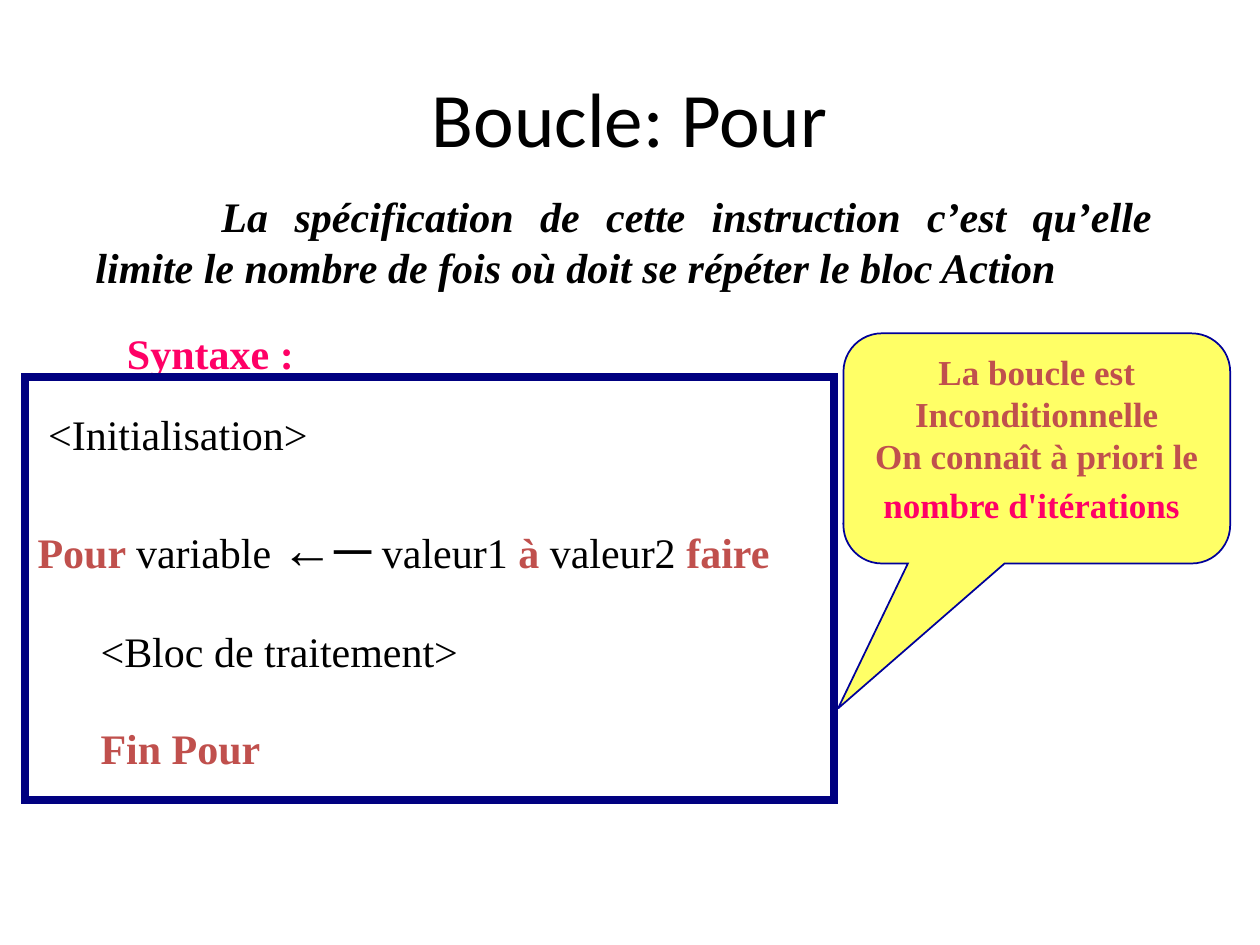
from lxml.etree import SubElement
from pptx import Presentation
from pptx.dml.color import RGBColor
from pptx.enum.shapes import MSO_SHAPE
from pptx.enum.text import MSO_ANCHOR, PP_ALIGN
from pptx.oxml.ns import qn
from pptx.util import Pt

BLACK = RGBColor(0x00, 0x00, 0x00)
WHITE = RGBColor(0xFF, 0xFF, 0xFF)
PINK = RGBColor(0xFF, 0x00, 0x66)
BRICK = RGBColor(0xC0, 0x50, 0x4D)
NAVY = RGBColor(0x00, 0x00, 0x80)
BLUE = RGBColor(0x00, 0x00, 0x99)
YELLOW = RGBColor(0xFF, 0xFF, 0x66)


def add_span(para, text, color=BLACK, size=24, bold=False, italic=False, name="Times New Roman"):
    span = para.add_run()
    span.text = text
    font = span.font
    font.name, font.size, font.bold, font.italic = name, Pt(size), bold, italic
    font.color.rgb = color
    return span


def add_box(kind, left, top, width, height, fill, line, line_width):
    """Add a filled shape with a sharp-cornered outline and text starting at its top."""
    box = slide.shapes.add_shape(kind, Pt(left), Pt(top), Pt(width), Pt(height))
    box.shadow.inherit = False
    box.fill.solid()
    box.fill.fore_color.rgb = fill
    box.line.color.rgb = line
    box.line.width = Pt(line_width)
    SubElement(box.line._get_or_add_ln(), qn("a:miter"), lim="800000")
    box.text_frame.word_wrap = True
    box.text_frame.vertical_anchor = MSO_ANCHOR.TOP
    return box


deck = Presentation()
deck.slide_width, deck.slide_height = Pt(720), Pt(540)
slide = deck.slides.add_slide(deck.slide_layouts[5])

# Title
title = slide.shapes.title
title.left, title.top, title.width, title.height = Pt(36), Pt(21.6), Pt(648), Pt(90)
title.text_frame.vertical_anchor = MSO_ANCHOR.MIDDLE
para = title.text_frame.paragraphs[0]
para.alignment = PP_ALIGN.CENTER
add_span(para, "Boucle: Pour", size=44, name="Calibri")

# Introduction, with its first line indented
intro = slide.shapes.add_textbox(Pt(47.5), Pt(105.5), Pt(618), Pt(65))
intro.text_frame.word_wrap = True
para = intro.text_frame.paragraphs[0]
para.alignment = PP_ALIGN.JUSTIFY
para._p.get_or_add_pPr().set("indent", str(Pt(72)))
add_span(para, "La spécification de cette instruction c’est qu’elle limite "
               "le nombre de fois où doit se répéter le bloc Action", bold=True, italic=True)

# Syntax heading
heading = slide.shapes.add_textbox(Pt(65.5), Pt(183.5), Pt(138), Pt(36))
heading.text_frame.word_wrap = True
span = add_span(heading.text_frame.paragraphs[0], "Syntaxe :", PINK, bold=True)
span.font.underline = True

# Syntax frame: one (indent, spans) pair per line, a span being (text, color, size, bold)
syntax = add_box(MSO_SHAPE.RECTANGLE, 14.4, 215.3, 462.2, 242, WHITE, NAVY, 4.5)
syntax_lines = [
    (6, [("<Initialisation>", BLACK, 24, False)]),
    (0, [("Pour ", BRICK, 24, True), ("variable ", BLACK, 24, False),
         ("←─", BLACK, 30, True), (" valeur1 ", BLACK, 24, False),
         ("à", BRICK, 24, True), (" valeur2 ", BLACK, 24, False),
         ("faire", BRICK, 24, True)]),
    (36, [("<Bloc de traitement>", BLACK, 24, False)]),
    (36, [("Fin Pour", BRICK, 24, True)]),
]
for number, (indent, spans) in enumerate(syntax_lines):
    para = syntax.text_frame.paragraphs[0] if number == 0 else syntax.text_frame.add_paragraph()
    para.alignment = PP_ALIGN.LEFT
    para.line_spacing = 1.5
    largest = max(size for text, color, size, bold in spans)
    para.space_before = Pt(largest / 2 if number else 0)
    para._p.get_or_add_pPr().set("marL", str(Pt(indent)))
    for text, color, size, bold in spans:
        add_span(para, text, color, size, bold)

# Callout
callout = add_box(MSO_SHAPE.ROUNDED_RECTANGULAR_CALLOUT, 482, 190.5, 221, 131.5, YELLOW, BLUE, 1)
for index, value in enumerate((-0.514, 1.13, 0.167)):
    callout.adjustments[index] = value
para = callout.text_frame.paragraphs[0]
para.alignment = PP_ALIGN.CENTER
add_span(para, "La boucle est Inconditionnelle", BRICK, 20, True)
para = callout.text_frame.add_paragraph()
para.alignment = PP_ALIGN.CENTER
add_span(para, "On connaît à priori le ", BRICK, 20, True)
add_span(para, "nombre d'itérations", PINK, 20, True)
add_span(para, " ", PINK, 24)

deck.save("out.pptx")
